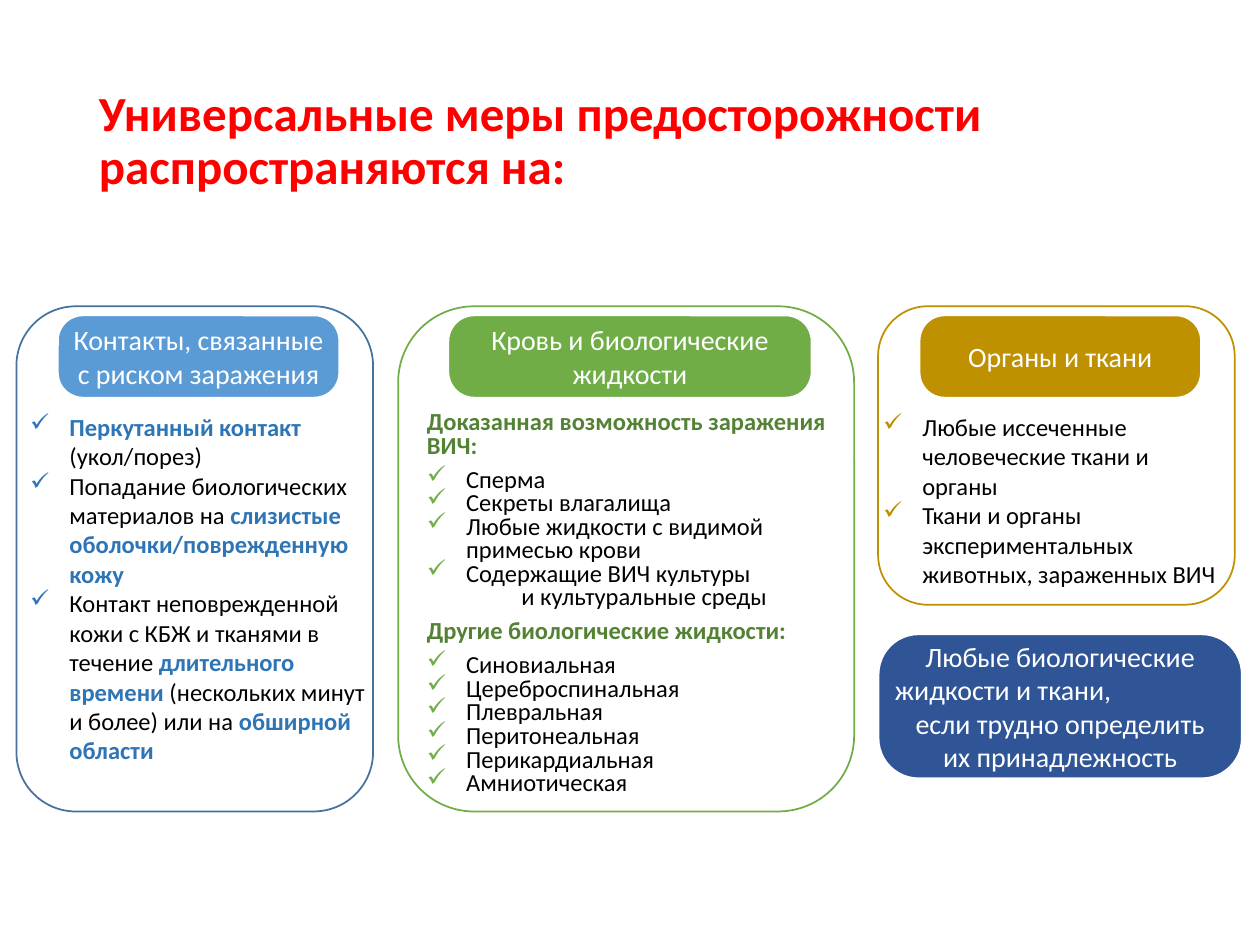
import pptx
import pptx.util
import pptx.dml.color
import pptx.enum.shapes
import pptx.enum.text
import pptx.oxml.ns
import lxml.etree

Pt = pptx.util.Pt
ALIGN = pptx.enum.text.PP_ALIGN
ANCHOR = pptx.enum.text.MSO_ANCHOR

THEME = {
    "font": "Calibri", "title_size": 28, "header_size": 16, "body_size": 14,
    "title": "FF0000", "text": "000000", "white": "FFFFFF", "summary": "2F5597",
}

TITLE = "Универсальные меры предосторожности\vраспространяются на:"

# Each paragraph is (kind, spans); a span is (text, highlighted).
CONTACTS = [
    ("bullet", [("Перкутанный контакт ", True), ("(укол/порез)", False)]),
    ("bullet", [("Попадание биологических материалов на ", False),
                ("слизистые оболочки/поврежденную кожу", True)]),
    ("bullet", [("Контакт неповрежденной кожи с КБЖ и тканями в течение ", False),
                ("длительного времени ", True),
                ("(нескольких минут и более) или на ", False),
                ("обширной области", True)]),
]
PROVEN = ["Сперма", "Секреты влагалища", "Любые жидкости с видимой примесью крови",
          "Содержащие ВИЧ культуры"]
OTHER = ["Синовиальная", "Цереброспинальная", "Плевральная", "Перитонеальная",
         "Перикардиальная", "Амниотическая"]
TISSUES = ["Любые иссеченные человеческие ткани и органы",
           "Ткани и органы экспериментальных животных, зараженных ВИЧ"]


def bullets(texts):
    return [("bullet", [(text, False)]) for text in texts]


FLUIDS = (
    [("heading", [("Доказанная возможность заражения ВИЧ:", True)])]
    + bullets(PROVEN)
    + [("continuation", [("и культуральные среды", False)]),
       ("heading", [("Другие биологические жидкости:", True)])]
    + bullets(OTHER)
)

PANELS = [
    {"header": "Контакты, связанные с риском заражения", "body": CONTACTS,
     "left": 9.4, "width": 203.8, "height": 288.7, "header_width": 161.3, "round": 0.306,
     "text_box": (14.4, 231.8, 198.7, 211), "insets": (2.9, 3.6), "spacing": 1,
     "fill": "5B9BD5", "outline": "43739E", "tick": "2E75B6", "highlight": "2E75B6"},
    {"header": "Кровь и биологические жидкости", "body": FLUIDS,
     "left": 227.5, "width": 260.6, "height": 288.7, "header_width": 208.1, "round": 0.318,
     "text_box": (236.9, 228.2, 251.3, 231.1), "insets": (7.2, 7.2), "spacing": 0.8,
     "fill": "70AD47", "outline": "70AD47", "tick": "70AD47", "highlight": "548235"},
    {"header": "Органы и ткани", "body": bullets(TISSUES),
     "left": 501.8, "width": 203.8, "height": 170.6, "header_width": 161.3, "round": 0.306,
     "text_box": (501.8, 231.8, 198.7, 108.7), "insets": (2.9, 3.6), "spacing": 1,
     "fill": "BF9000", "outline": "BF9000", "tick": "BF9000", "highlight": "BF9000"},
]
PANEL_TOP, HEADER_TOP, HEADER_HEIGHT, HEADER_SHIFT = 175, 180, 47.5, 2.2

SUMMARY = [("Любые биологические", ALIGN.CENTER), ("жидкости и ткани,", ALIGN.LEFT),
           ("если трудно определить", ALIGN.CENTER), ("их принадлежность", ALIGN.CENTER)]
SUMMARY_BOX = (501.8, 362.2, 208.1, 82.8)

INDENTS = {"heading": (0, 0), "bullet": (22.4, -22.4), "continuation": (54, 0)}


def rgb(code):
    return pptx.dml.color.RGBColor.from_string(code)


def set_font(target, size, color, bold=False):
    font = target.font
    font.name, font.size, font.bold = THEME["font"], Pt(size), bold
    font.color.rgb = rgb(color)


def set_frame(shape, horizontal, vertical, anchor):
    frame = shape.text_frame
    frame.word_wrap = True
    frame.margin_left = frame.margin_right = Pt(horizontal)
    frame.margin_top = frame.margin_bottom = Pt(vertical)
    frame.vertical_anchor = anchor
    return frame


def paragraphs(frame, count):
    return [frame.paragraphs[0]] + [frame.add_paragraph() for _ in range(count - 1)]


def add_rounded(slide, box, fill, line, line_width, rounding=None):
    shape = slide.shapes.add_shape(
        pptx.enum.shapes.MSO_SHAPE.ROUNDED_RECTANGLE, *map(Pt, box))
    shape.shadow.inherit = False
    if rounding is not None:
        shape.adjustments[0] = rounding
    if fill:
        shape.fill.solid()
        shape.fill.fore_color.rgb = rgb(fill)
    else:
        shape.fill.background()
    shape.line.color.rgb = rgb(line)
    shape.line.width = Pt(line_width)
    return shape


def add_label(slide, box, fill, rounding, lines):
    """Filled pill with white text; each line is (text, alignment)."""
    shape = add_rounded(slide, box, fill, THEME["white"], 1.5, rounding)
    frame = set_frame(shape, 2.9, 3.6, ANCHOR.MIDDLE)
    for para, (text, alignment) in zip(paragraphs(frame, len(lines)), lines):
        para.text, para.alignment = text, alignment
        set_font(para, THEME["header_size"], THEME["white"])


def format_list(para, kind, tick_color):
    """Set the hanging indent and, for a bullet, a coloured tick."""
    properties = para._p.get_or_add_pPr()
    margin, indent = INDENTS[kind]
    properties.set("marL", str(Pt(margin)))
    properties.set("indent", str(Pt(indent)))
    if kind == "bullet":
        qn = pptx.oxml.ns.qn
        color = lxml.etree.SubElement(properties, qn("a:buClr"))
        lxml.etree.SubElement(color, qn("a:srgbClr"), val=tick_color)
        lxml.etree.SubElement(properties, qn("a:buChar"), char="✓")


def add_body(slide, panel):
    box = slide.shapes.add_textbox(*map(Pt, panel["text_box"]))
    frame = set_frame(box, *panel["insets"], ANCHOR.TOP)
    body = panel["body"]
    next_kinds = [kind for kind, _ in body[1:]] + [None]
    for para, (kind, spans), next_kind in zip(paragraphs(frame, len(body)), body, next_kinds):
        format_list(para, kind, panel["tick"])
        para.line_spacing = panel["spacing"]
        para.space_after = Pt(6 if "heading" in (kind, next_kind) else 0)
        for text, highlighted in spans:
            span = para.add_run()
            span.text = text
            color = panel["highlight"] if highlighted else THEME["text"]
            set_font(span, THEME["body_size"], color, highlighted)


def add_panel(slide, panel):
    left, width, header_width = panel["left"], panel["width"], panel["header_width"]
    header_left = left + (width - header_width) / 2 + HEADER_SHIFT
    add_label(slide, (header_left, HEADER_TOP, header_width, HEADER_HEIGHT),
              panel["fill"], panel["round"], [(panel["header"], ALIGN.CENTER)])
    add_body(slide, panel)
    add_rounded(slide, (left, PANEL_TOP, width, panel["height"]), None, panel["outline"], 1)


def add_title(slide):
    box = slide.shapes.add_textbox(Pt(49.5), Pt(28.8), Pt(621), Pt(104.4))
    para = set_frame(box, 7.2, 3.6, ANCHOR.MIDDLE).paragraphs[0]
    para.text = TITLE
    para.line_spacing = 0.9
    set_font(para, THEME["title_size"], THEME["title"], True)


def main():
    deck = pptx.Presentation()
    deck.slide_width, deck.slide_height = Pt(720), Pt(540)
    slide = deck.slides.add_slide(deck.slide_layouts[6])
    add_title(slide)
    for panel in PANELS:
        add_panel(slide, panel)
    add_label(slide, SUMMARY_BOX, THEME["summary"], 0.279, SUMMARY)
    deck.save("out.pptx")


if __name__ == "__main__":
    main()
